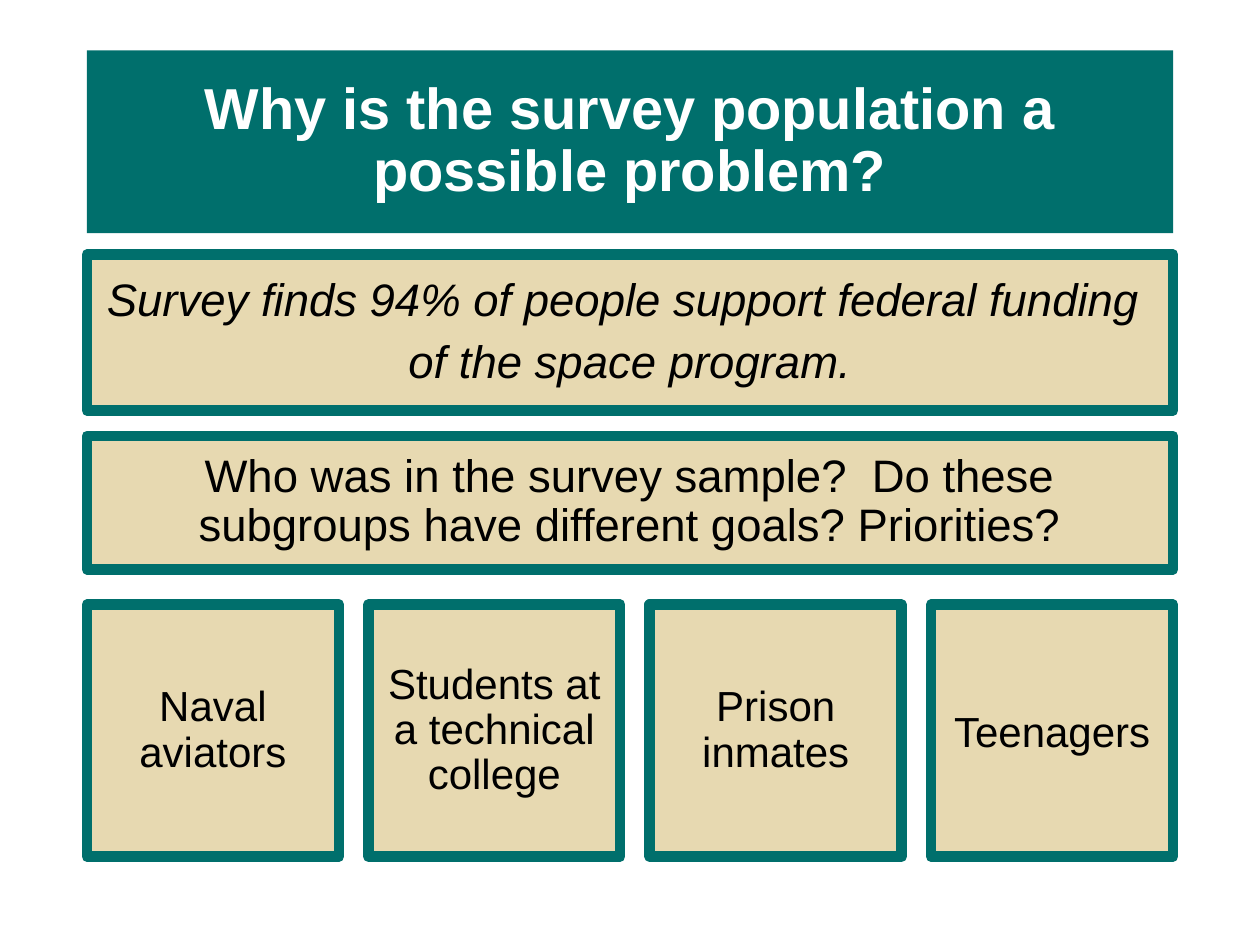
"""Build a slide asking why a survey population may be a problem."""
from dataclasses import dataclass

from pptx import Presentation
from pptx import util as u
from pptx.dml.color import RGBColor
from pptx.enum import shapes, text


@dataclass(frozen=True)
class Theme:
    teal: RGBColor = RGBColor(0x00, 0x6F, 0x6C)
    sand: RGBColor = RGBColor(0xE7, 0xD9, 0xB1)
    white: RGBColor = RGBColor(0xFF, 0xFF, 0xFF)
    black: RGBColor = RGBColor(0x00, 0x00, 0x00)
    font: str = "Arial"
    title: int = 33
    body: int = 26
    card: int = 24
    border: int = 6


@dataclass(frozen=True)
class Panel:
    lines: tuple[str, ...]
    left: float
    top: float
    width: float
    height: float
    size: int
    heading: bool = False
    italic: bool = False
    spacing: float = 0.9


THEME = Theme()
LEFT, WIDTH = 0.69, 8.62
CARD_TOP, CARD_SIZE, LAST_WIDTH = 4.8, 2.0, 1.92
GROUPS = ("Naval aviators", "Students at a technical college", "Prison inmates", "Teenagers")


def draw_panel(s, panel: Panel) -> None:
    sp = s.shapes.add_shape(
        shapes.MSO_SHAPE.RECTANGLE, u.Inches(panel.left), u.Inches(panel.top),
        u.Inches(panel.width), u.Inches(panel.height))
    sp.shadow.inherit = False
    sp.fill.solid()
    sp.fill.fore_color.rgb = THEME.teal if panel.heading else THEME.sand
    if panel.heading:
        sp.line.fill.background()
    else:
        sp.line.color.rgb = THEME.teal
        sp.line.width = u.Pt(THEME.border)
    tf = sp.text_frame
    tf.word_wrap = True
    tf.vertical_anchor = text.MSO_ANCHOR.MIDDLE
    for i, line in enumerate(panel.lines):
        p = tf.add_paragraph() if i else tf.paragraphs[0]
        p.text = line
        p.alignment = text.PP_ALIGN.CENTER
        p.line_spacing = panel.spacing
        p.space_before = u.Pt(0 if panel.heading or panel.spacing == 1 else 7.5)
        p.font.name = THEME.font
        p.font.size = u.Pt(panel.size)
        p.font.bold = panel.heading
        p.font.italic = panel.italic
        p.font.color.rgb = THEME.white if panel.heading else THEME.black


def group_cards() -> list[Panel]:
    last = len(GROUPS) - 1
    pitch = (WIDTH - LAST_WIDTH) / last
    return [
        Panel((name,), LEFT + i * pitch, CARD_TOP, LAST_WIDTH if i == last else CARD_SIZE,
              CARD_SIZE, THEME.card, spacing=1.0 if i == last else 0.9)
        for i, name in enumerate(GROUPS)
    ]


def main() -> None:
    prs = Presentation()
    prs.slide_width, prs.slide_height = u.Inches(10), u.Inches(7.5)
    s = prs.slides.add_slide(prs.slide_layouts[6])
    panels = [
        Panel(("Why is the survey population a possible problem?",),
              LEFT, 0.4, WIDTH, 1.45, THEME.title, heading=True),
        Panel(("Survey finds 94% of people support federal funding ", "of the space program."),
              LEFT, 2.02, WIDTH, 1.24, THEME.body, italic=True),
        Panel(("Who was in the survey sample?  Do these subgroups have different goals? Priorities?",),
              LEFT, 3.46, WIDTH, 1.06, THEME.body),
        *group_cards(),
    ]
    for panel in panels:
        draw_panel(s, panel)
    prs.save("out.pptx")


if __name__ == "__main__":
    main()
